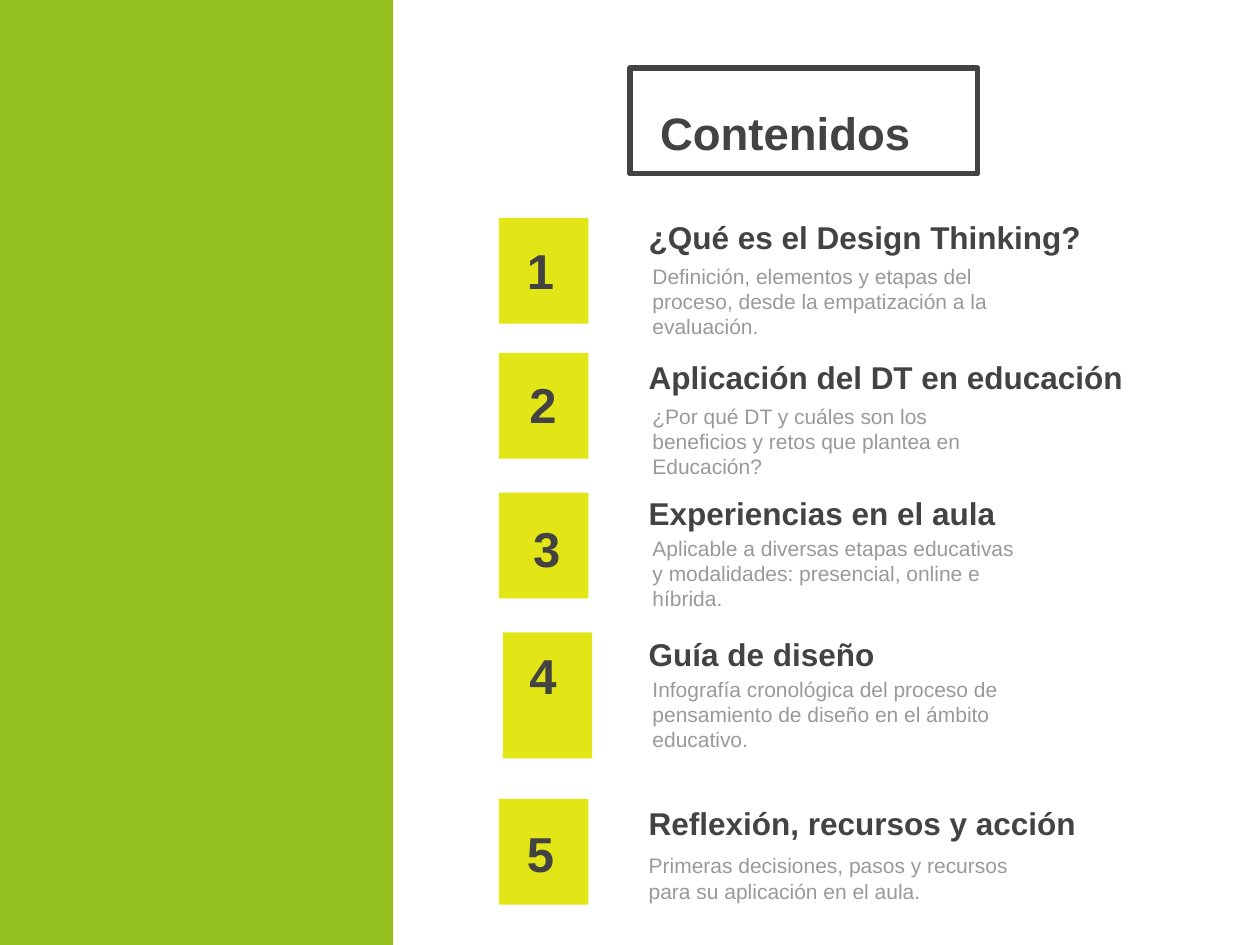
import pptx
import pptx.util
from pptx.dml.color import RGBColor
from pptx.enum.shapes import MSO_SHAPE
from pptx.enum.text import MSO_ANCHOR, PP_ALIGN
from pptx.util import Inches, Pt

GREEN = RGBColor(0x93, 0xC0, 0x1F)
YELLOW = RGBColor(0xE2, 0xE6, 0x16)
DARK = RGBColor(0x43, 0x43, 0x43)
GRAY = RGBColor(0x99, 0x99, 0x99)

# heading, description, tile (left, top, height), number centre (x, y),
# heading bottom, description (left, top, width)
TOPICS = [
    ("¿Qué es el Design Thinking?",
     "Definición, elementos y etapas del proceso, desde la empatización a la evaluación.",
     (3.96, 1.73, 0.84), (4.29, 2.14), 2.13, (5.08, 1.99, 3.07)),
    ("Aplicación del DT en educación",
     "¿Por qué DT y cuáles son los beneficios y retos que plantea en Educación?",
     (3.96, 2.8, 0.84), (4.31, 3.21), 3.24, (5.08, 3.1, 3.07)),
    ("Experiencias en el aula",
     "Aplicable a diversas etapas educativas y modalidades: presencial, online e híbrida.",
     (3.96, 3.91, 0.84), (4.34, 4.35), 4.32, (5.08, 4.15, 3.12)),
    ("Guía de diseño",
     "Infografía cronológica del proceso de pensamiento de diseño en el ámbito educativo.",
     (3.99, 5.02, 1), (4.31, 5.36), 5.44, (5.08, 5.27, 3.39)),
    ("Reflexión, recursos y acción",
     "Primeras decisiones, pasos y recursos para su aplicación en el aula.",
     (3.96, 6.34, 0.84), (4.29, 6.77), 6.78, (5.05, 6.67, 3.29)),
]
TILE_W = 0.71
NUMBER_W, NUMBER_H = 1.2, 0.73
HEADING_X, HEADING_W, HEADING_H = 5.05, 4.95, 0.44
DESCRIPTION_H = 0.67


def add_rect(s, x, y, w, h, fill=None):
    sp = s.shapes.add_shape(MSO_SHAPE.RECTANGLE, *map(Inches, (x, y, w, h)))
    sp.shadow.inherit = False
    sp.line.fill.background()
    if fill is None:
        sp.fill.background()
    else:
        sp.fill.solid()
        sp.fill.fore_color.rgb = fill
    return sp


def add_text(s, text, x, y, w, h, size, color=DARK, bold=True,
             anchor=MSO_ANCHOR.MIDDLE, align=PP_ALIGN.LEFT):
    tf = s.shapes.add_textbox(*map(Inches, (x, y, w, h))).text_frame
    tf.word_wrap = True
    tf.margin_left = tf.margin_right = tf.margin_top = tf.margin_bottom = Inches(0.1)
    tf.vertical_anchor = anchor
    p = tf.paragraphs[0]
    p.text = text
    p.alignment = align
    p.font.name = "Arial"
    p.font.size = Pt(size)
    p.font.bold = bold
    p.font.color.rgb = color
    return p


def add_topic(s, number, heading, description, tile, centre, bottom, place):
    x, y, h = tile
    add_rect(s, x, y, TILE_W, h, YELLOW)
    cx, cy = centre
    add_text(s, str(number), cx - NUMBER_W / 2, cy - NUMBER_H / 2,
             NUMBER_W, NUMBER_H, 28, align=PP_ALIGN.CENTER)
    add_text(s, heading, HEADING_X, bottom - HEADING_H, HEADING_W, HEADING_H, 18,
             anchor=MSO_ANCHOR.BOTTOM)
    add_text(s, description, *place, DESCRIPTION_H, 12, GRAY, False, MSO_ANCHOR.TOP)


prs = pptx.Presentation()
prs.slide_width, prs.slide_height = Inches(10), Inches(7.5)
s = prs.slides.add_slide(prs.slide_layouts[6])

add_rect(s, 0, 0, 3.12, 7.5, GREEN)
frame = add_rect(s, 5, 0.54, 2.76, 0.84)
frame.line.color.rgb = DARK
frame.line.width = Pt(3)
title = add_text(s, "Contenidos", 5.14, 0.52, 2.5, 1, 26)
title.line_spacing = 1.15

for number, topic in enumerate(TOPICS, 1):
    add_topic(s, number, *topic)

prs.save("out.pptx")
